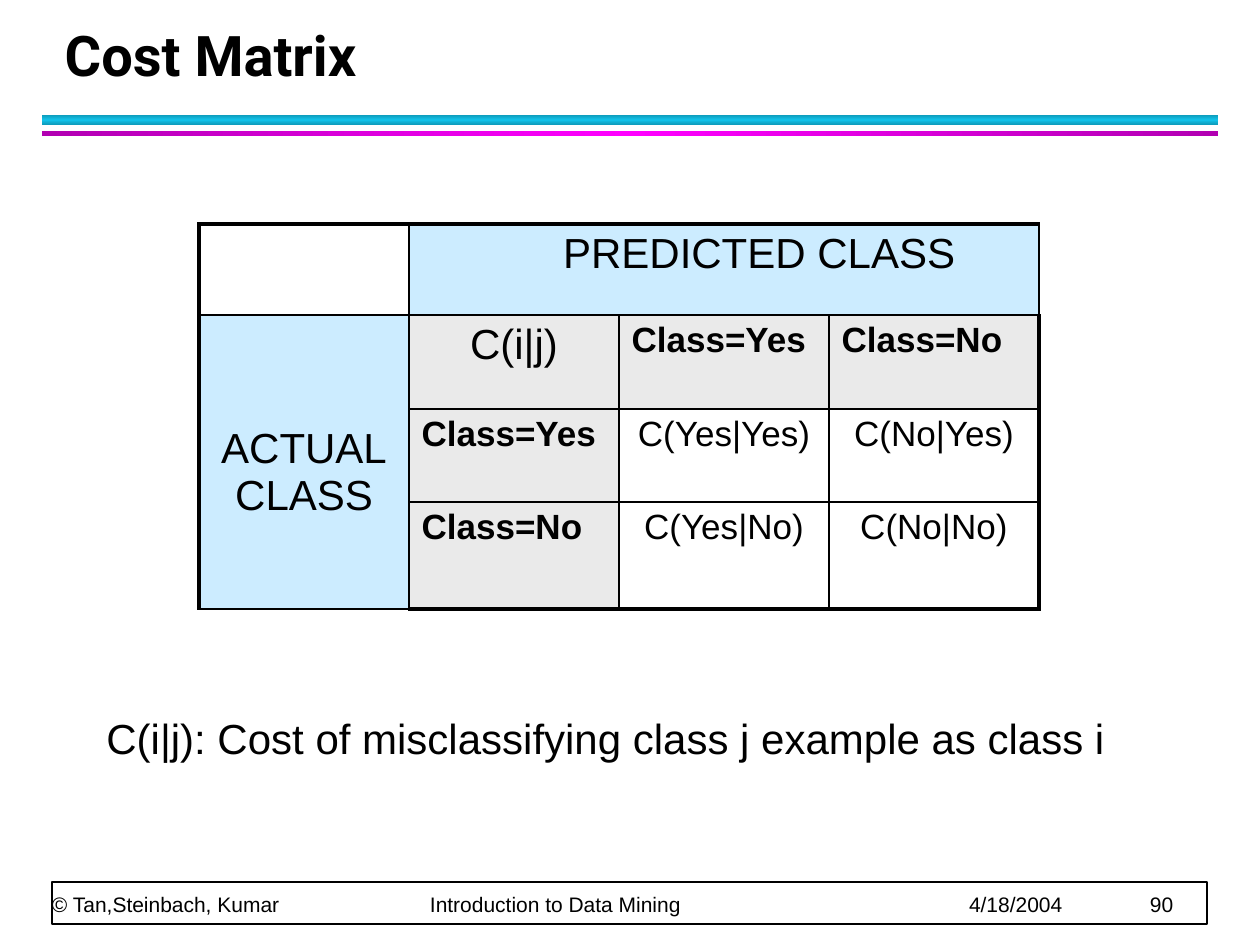
from copy import deepcopy

from lxml import etree
from pptx import Presentation
from pptx.dml.color import RGBColor
from pptx.enum.shapes import MSO_SHAPE
from pptx.enum.text import MSO_ANCHOR, PP_ALIGN
from pptx.oxml.ns import qn
from pptx.util import Pt

RECTANGLE = MSO_SHAPE.RECTANGLE
TOP, MIDDLE, BOTTOM = MSO_ANCHOR.TOP, MSO_ANCHOR.MIDDLE, MSO_ANCHOR.BOTTOM
LEFT, CENTER = PP_ALIGN.LEFT, PP_ALIGN.CENTER

EMU_PER_PX = 914400 / 126
BLACK, WHITE, BLUE, GRAY = "000000", "FFFFFF", "CCECFF", "EAEAEA"


def px(length):
    return round(length * EMU_PER_PX)


def color(value):
    return RGBColor.from_string(value)


class SlideBuilder:
    """Draws styled elements on the current slide."""

    def __init__(self, slide, font="Arial"):
        self.slide = slide
        self.font = font

    def set_text(self, frame, text, size, bold=False, align=LEFT, font=None, spacing=None):
        frame.word_wrap = True
        frame.text = text
        paragraph = frame.paragraphs[0]
        paragraph.alignment = align
        if spacing:
            paragraph.line_spacing = Pt(spacing)
        for run in paragraph.runs:
            run.font.name = font or self.font
            run.font.size = Pt(size)
            run.font.bold = bold
            run.font.color.rgb = color(BLACK)
        return paragraph

    def title(self, box, text):
        heading = self.slide.shapes.title
        heading.left, heading.top, heading.width, heading.height = map(px, box)
        heading.text_frame.vertical_anchor = BOTTOM
        self.set_text(heading.text_frame, text, 32, True, font="Roboto", spacing=36)

    def rectangle(self, box):
        shape = self.slide.shapes.add_shape(RECTANGLE, *map(px, box))
        shape.shadow.inherit = False
        return shape

    def gradient_bar(self, box, edge, middle, angle):
        bar = self.rectangle(box)
        bar.line.fill.background()
        bar.fill.gradient()
        bar.fill.gradient_angle = angle
        first_stop = bar._element.find(".//" + qn("a:gs"))
        first_stop.addnext(deepcopy(first_stop))
        stops = zip(bar.fill.gradient_stops, (0, 0.5, 1), (edge, middle, edge))
        for stop, position, shade in stops:
            stop.position = position
            stop.color.rgb = color(shade)

    def frame(self, box):
        border = self.rectangle(box)
        border.fill.solid()
        border.fill.fore_color.rgb = color(WHITE)
        border.line.color.rgb = color(BLACK)
        border.line.width = Pt(1)

    def text(self, box, text, size, **style):
        frame = self.slide.shapes.add_textbox(*map(px, box)).text_frame
        return frame, self.set_text(frame, text, size, **style)

    def footer(self, box, parts, starts):
        frame, line = self.text(box, "\t".join(parts), 12, spacing=20)
        frame.margin_left = frame.margin_right = 0
        frame.margin_top = frame.margin_bottom = 0
        frame.vertical_anchor = BOTTOM
        tabs = etree.SubElement(line._p.get_or_add_pPr(), qn("a:tabLst"))
        for start in starts:
            etree.SubElement(tabs, qn("a:tab"), pos=str(px(start - box[0])), algn="l")

    def border(self, cell, side, width):
        edge = etree.SubElement(
            cell._tc.get_or_add_tcPr(), qn(f"a:ln{side}"), w=str(Pt(width)))
        fill = etree.SubElement(edge, qn("a:solidFill"))
        etree.SubElement(fill, qn("a:srgbClr"), val=BLACK)

    def table(self, left, top, column_width, row_heights, rows, spans):
        count = len(rows[0])
        table = self.slide.shapes.add_table(
            len(rows), count, px(left), px(top),
            px(column_width * count), px(sum(row_heights))).table
        table.first_row = table.horz_banding = False
        for column in table.columns:
            column.width = px(column_width)
        for row, height in zip(table.rows, row_heights):
            row.height = px(height)
        for r, row in enumerate(rows):
            for c, (text, size, bold, align, fill) in enumerate(row):
                cell = table.cell(r, c)
                outer = {"L": c == 0, "R": c == count - 1,
                         "T": r == 0, "B": r == len(rows) - 1}
                for side, is_outer in outer.items():
                    self.border(cell, side, 2.25 if is_outer else 1)
                if fill:
                    cell.fill.solid()
                    cell.fill.fore_color.rgb = color(fill)
                else:
                    cell.fill.background()
                cell.vertical_anchor = TOP
                if text:
                    self.set_text(cell.text_frame, text, size, bold, align)
        for start, end in spans:
            table.cell(*start).merge(table.cell(*end))
        return table


def main():
    presentation = Presentation()
    presentation.slide_width, presentation.slide_height = px(1260), px(945)
    builder = SlideBuilder(
        presentation.slides.add_slide(presentation.slide_layouts[5]))

    builder.gradient_bar((42, 115, 1176, 10), "0E9BBA", "12C2E9", 90)
    builder.gradient_bar((42, 131, 1176, 5), "B200B2", "FF00FF", 0)
    builder.frame((52, 882, 1155, 42))
    builder.footer(
        (52, 882, 1153, 35),
        ("© Tan,Steinbach, Kumar", "Introduction to Data Mining", "4/18/2004", "90"),
        (430, 969, 1150))
    builder.title((52, 21, 1142, 73), "Cost Matrix")

    def heading(text, fill=BLUE):
        return text, 24, False, CENTER, fill

    def label(text):
        return text, 20, True, LEFT, GRAY

    def cost(text):
        return text, 20, False, CENTER, None

    blank, covered = cost(""), heading("")
    matrix = builder.table(
        199, 224, 210, (91, 94, 93, 107),
        [
            [blank, heading("PREDICTED CLASS"), covered, covered],
            [heading("ACTUAL\vCLASS"), heading("C(i|j)", GRAY),
             label("Class=Yes"), label("Class=No")],
            [covered, label("Class=Yes"), cost("C(Yes|Yes)"), cost("C(No|Yes)")],
            [covered, label("Class=No"), cost("C(Yes|No)"), cost("C(No|No)")],
        ],
        [((0, 1), (0, 3)), ((1, 0), (3, 0))])
    matrix.cell(0, 1).margin_left = px(83)
    actual = matrix.cell(1, 0)
    actual.vertical_anchor = MIDDLE
    actual.margin_top = px(28)

    builder.text((94, 706, 1081, 126),
                 "C(i|j): Cost of misclassifying class j example as class i", 24)
    presentation.save("out.pptx")


if __name__ == "__main__":
    main()
